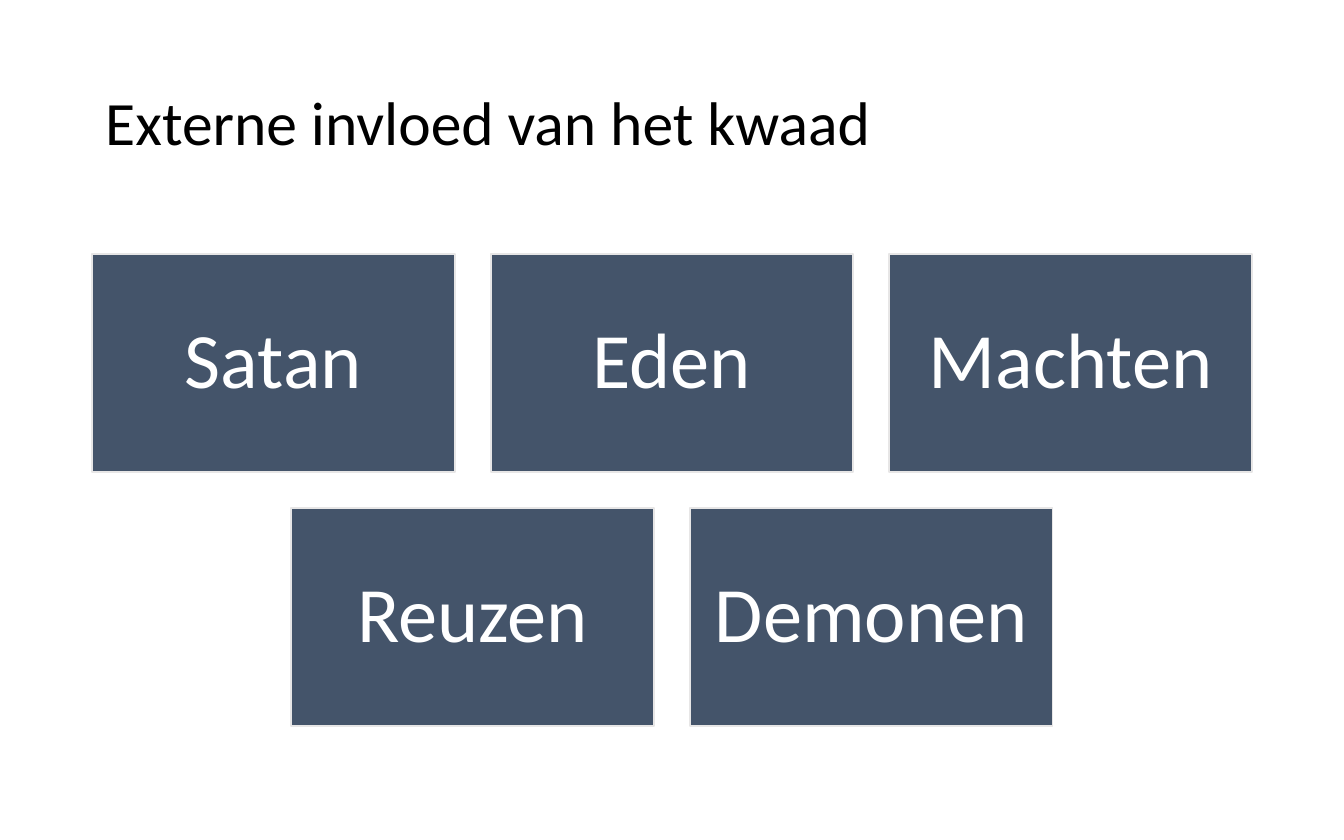
from pptx import Presentation
from pptx.dml.color import RGBColor
from pptx.enum.shapes import MSO_SHAPE
from pptx.enum.text import MSO_ANCHOR, PP_ALIGN
from pptx.util import Pt

SCALE = 914400 / 134.4  # EMU in one px
FONT = "Calibri"
COLORS = {"title": "000000", "fill": "44546A", "edge": "E7E6E6", "label": "FFFFFF"}


def px(n):
    return round(n * SCALE)


def color(name):
    return RGBColor.from_string(COLORS[name])


def write(frame, text, size, hue, align):
    frame.word_wrap = True
    frame.vertical_anchor = MSO_ANCHOR.MIDDLE
    para = frame.paragraphs[0]
    para.alignment = align
    para.line_spacing = 0.9
    run = para.add_run()
    run.text = text
    run.font.name = FONT
    run.font.size = Pt(size)
    run.font.color.rgb = color(hue)


def add_title(slide, box, text):
    area = slide.shapes.add_textbox(*map(px, box))
    write(area.text_frame, text, 33, "title", PP_ALIGN.LEFT)


def add_card(slide, box, text):
    card = slide.shapes.add_shape(MSO_SHAPE.RECTANGLE, *map(px, box))
    card.shadow.inherit = False
    card.fill.solid()
    card.fill.fore_color.rgb = color("fill")
    card.line.color.rgb = color("edge")
    card.line.width = Pt(1)
    frame = card.text_frame
    frame.margin_left = frame.margin_right = px(23)
    frame.margin_top = frame.margin_bottom = px(23)
    write(frame, text, 42, "label", PP_ALIGN.CENTER)


def add_grid(slide, box, rows, gap):
    left, top, width, height = box
    # The fullest row fills the width; shorter rows are centred
    most = max(map(len, rows))
    wide = (width - gap * (most - 1)) / most
    high = (height - gap * (len(rows) - 1)) / len(rows)
    for i, row in enumerate(rows):
        start = left + (most - len(row)) * (wide + gap) / 2
        for j, text in enumerate(row):
            spot = (start + j * (wide + gap), top + i * (high + gap), wide, high)
            add_card(slide, spot, text)


def main():
    deck = Presentation()
    deck.slide_width, deck.slide_height = px(1344), px(840)
    slide = deck.slides.add_slide(deck.slide_layouts[6])

    # Title
    add_title(slide, (92, 44, 1160, 163), "Externe invloed van het kwaad")

    # Cards
    rows = [["Satan", "Eden", "Machten"], ["Reuzen", "Demonen"]]
    add_grid(slide, (92, 254, 1160, 472), rows, 36)

    deck.save("out.pptx")


if __name__ == "__main__":
    main()
